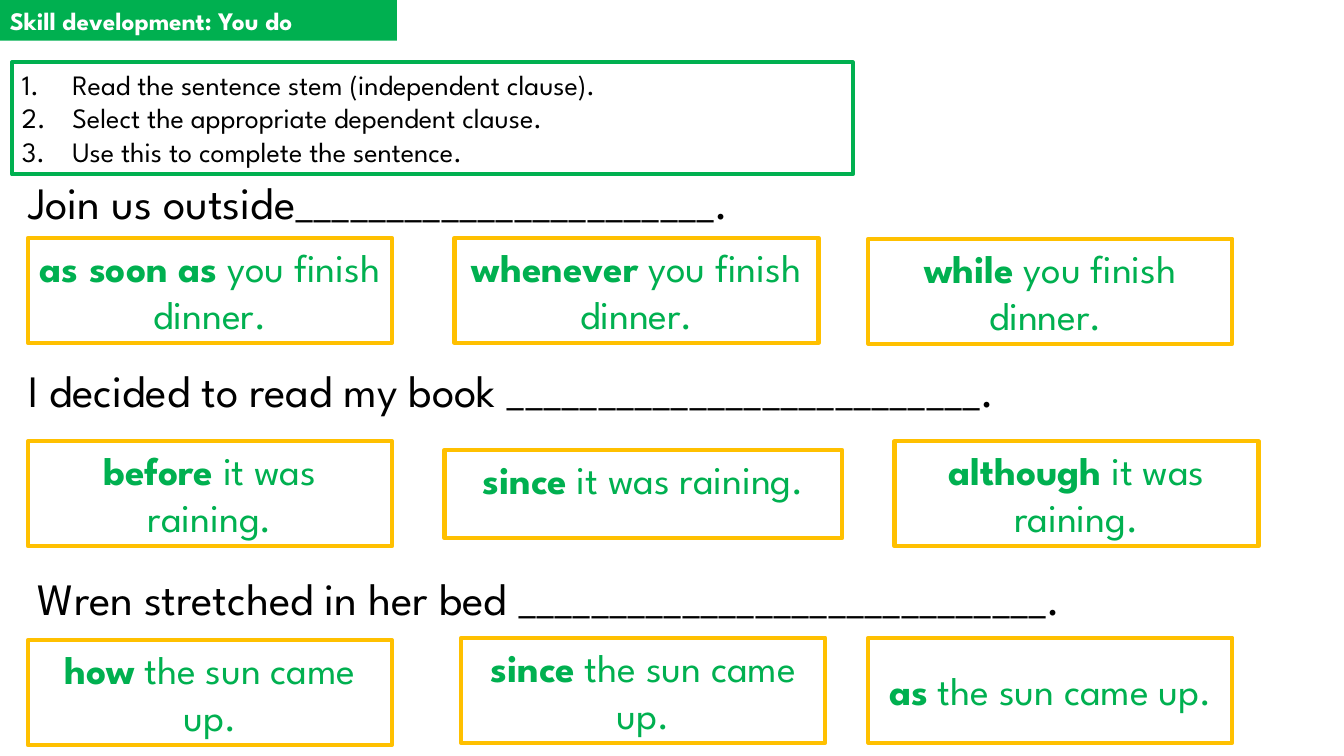
"""Build the 'You do' slide on completing sentences with dependent clauses."""
from lxml import etree
from pptx import Presentation
from pptx.dml.color import RGBColor
from pptx.enum import shapes, text
from pptx.oxml.ns import qn
from pptx.util import Pt

COLORS = {"green": "00B050", "gold": "FFC000", "white": "FFFFFF", "black": "000000"}
FONT = "League Spartan"
TITLE = "Skill development: You do"
STEPS = [
    "Read the sentence stem (independent clause).",
    "Select the appropriate dependent clause.",
    "Use this to complete the sentence.",
]
CHOICE_W, CHOICE_H = 260, 75
MIDDLE, TOP = text.MSO_ANCHOR.MIDDLE, text.MSO_ANCHOR.TOP
CENTER, LEFT = text.PP_ALIGN.CENTER, text.PP_ALIGN.LEFT

# Each question: stem, blank length, (left, top), then choices as
# (conjunction, rest, (left, top), (width, height), anchor).
SIZE = (CHOICE_W, CHOICE_H)
QUESTIONS = [
    ("Join us outside", 23, (13, 121), [
        ("as soon as ", "you finish dinner.", (20, 170), SIZE, MIDDLE),
        ("whenever", " you finish dinner.", (324.7, 170), SIZE, MIDDLE),
        ("while", " you finish dinner. ", (620.3, 170.6), SIZE, MIDDLE),
    ]),
    ("I decided to read my book ", 26, (13, 255.6), [
        ("before", " it was raining.", (20, 315.2), SIZE, MIDDLE),
        ("since", " it was raining.", (317.5, 321.4), (284, 63), TOP),
        ("although", " it was raining.", (639, 315.2), SIZE, MIDDLE),
    ]),
    ("Wren stretched in her bed ", 29, (20, 404), [
        ("how", " the sun came up.", (20, 457.2), SIZE, MIDDLE),
        ("since", " the sun came up.", (329.5, 455.6), SIZE, MIDDLE),
        ("as", " the sun came up.", (620.3, 455.6), SIZE, MIDDLE),
    ]),
]


def rgb(name):
    return RGBColor.from_string(COLORS[name])


def add_run(p, words, size, color, bold=False):
    r = p.add_run()
    r.text = words
    r.font.name, r.font.size, r.font.bold = FONT, Pt(size), bold
    r.font.color.rgb = rgb(color)


def add_box(s, at, size, fill=None, line=None, anchor=TOP, align=LEFT):
    sp = s.shapes.add_shape(shapes.MSO_SHAPE.RECTANGLE, *map(Pt, at + size))
    sp.shadow.inherit = False
    if fill:
        sp.fill.solid()
        sp.fill.fore_color.rgb = rgb(fill)
    else:
        sp.fill.background()
    if line:
        sp.line.color.rgb = rgb(line)
        sp.line.width = Pt(3)
    else:
        sp.line.fill.background()
    tf = sp.text_frame
    tf.word_wrap = True
    tf.vertical_anchor = anchor
    tf.paragraphs[0].alignment = align
    return tf


def add_stem(s, words, at):
    tf = s.shapes.add_textbox(*map(Pt, at + (900, 46))).text_frame
    tf.word_wrap = True
    add_run(tf.paragraphs[0], words, 32, "black")


def add_steps(s):
    tf = add_box(s, (8.6, 44.6), (600.5, 80), "white", "green")
    for i, step in enumerate(STEPS):
        p = tf.add_paragraph() if i else tf.paragraphs[0]
        p.alignment = LEFT
        pPr = p._p.get_or_add_pPr()
        pPr.set("marL", str(Pt(36)))
        pPr.set("indent", str(Pt(-36)))
        font = etree.SubElement(pPr, qn("a:buFont"))
        font.set("typeface", "+mj-lt")
        etree.SubElement(pPr, qn("a:buAutoNum")).set("type", "arabicPeriod")
        add_run(p, step, 20, "black")


def main():
    prs = Presentation()
    prs.slide_width, prs.slide_height = Pt(960), Pt(540)
    s = prs.slides.add_slide(prs.slide_layouts[6])
    title = add_box(s, (0, 0), (283.5, 29), "green")
    add_run(title.paragraphs[0], TITLE, 18, "white", True)
    for stem, blank, at, choices in QUESTIONS:
        add_stem(s, stem + "_" * blank + ".", at)
        for conjunction, rest, place, size, anchor in choices:
            tf = add_box(s, place, size, None, "gold", anchor, CENTER)
            add_run(tf.paragraphs[0], conjunction, 28, "green", True)
            add_run(tf.paragraphs[0], rest, 28, "green")
    add_steps(s)
    prs.save("out.pptx")


if __name__ == "__main__":
    main()
